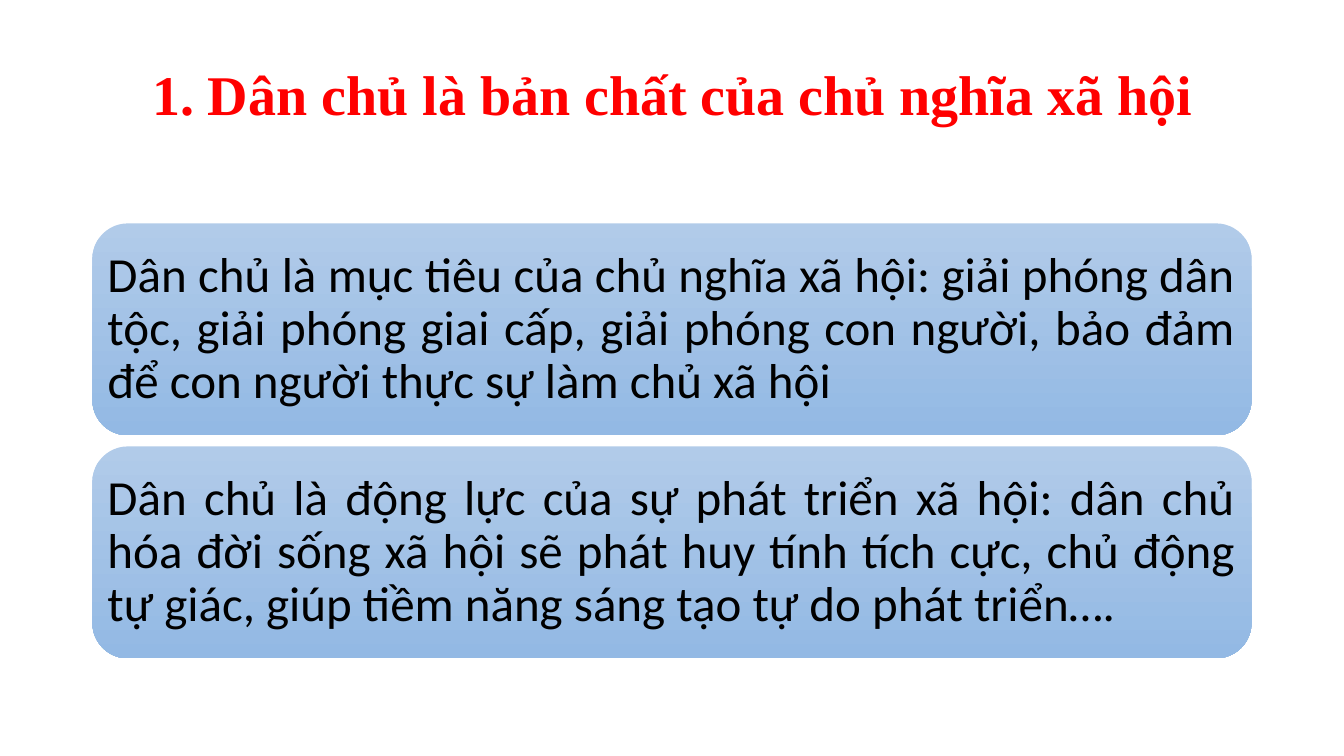
from dataclasses import dataclass

from pptx import Presentation
from pptx.dml.color import RGBColor
from pptx.enum import shapes, text
from pptx.util import Cm, Pt

HEADING = "1. Dân chủ là bản chất của chủ nghĩa xã hội"
ROLES = [
    "Dân chủ là mục tiêu của chủ nghĩa xã hội: giải phóng dân tộc, giải phóng giai cấp, "
    "giải phóng con người, bảo đảm để con người thực sự làm chủ xã hội",
    "Dân chủ là động lực của sự phát triển xã hội: dân chủ hóa đời sống xã hội sẽ phát huy "
    "tính tích cực, chủ động tự giác, giúp tiềm năng sáng tạo tự do phát triển….",
]


@dataclass(frozen=True)
class Theme:
    heading_font: str = "Times New Roman"
    heading_size: int = 40
    heading_color: str = "FF0000"
    role_font: str = "Calibri"
    role_size: int = 35
    role_color: str = "000000"
    gradient: tuple = ("B1CBE9", "93B9E4")


THEME = Theme()
LEFT, WIDTH = Cm(2.33), Cm(29.21)
HEADING_TOP, HEADING_HEIGHT = Cm(1.01), Cm(2.9)
ROLES_TOP, ROLE_HEIGHT, ROLE_GAP = Cm(5.63), Cm(5.34), Cm(0.28)
ROLE_MARGIN = Cm(0.12)


def write(frame, words, align, font, size, color, bold=False):
    frame.word_wrap = True
    frame.auto_size = text.MSO_AUTO_SIZE.NONE
    frame.vertical_anchor = text.MSO_ANCHOR.MIDDLE
    paragraph = frame.paragraphs[0]
    paragraph.alignment = align
    paragraph.line_spacing = 0.9
    paragraph.space_before = Pt(0)
    run = paragraph.add_run()
    run.text = words
    run.font.name = font
    run.font.size = Pt(size)
    run.font.bold = bold
    run.font.color.rgb = RGBColor.from_string(color)


def add_heading(slide):
    heading = slide.shapes.title
    heading.left, heading.top = LEFT, HEADING_TOP
    heading.width, heading.height = WIDTH, HEADING_HEIGHT
    write(heading.text_frame, HEADING, text.PP_ALIGN.CENTER,
          THEME.heading_font, THEME.heading_size, THEME.heading_color, bold=True)


def add_role(slide, index, words):
    top = ROLES_TOP + index * (ROLE_HEIGHT + ROLE_GAP)
    role = slide.shapes.add_shape(
        shapes.MSO_SHAPE.ROUNDED_RECTANGLE, LEFT, top, WIDTH, ROLE_HEIGHT)
    role.shadow.inherit = False
    role.line.fill.background()
    role.fill.gradient()
    role.fill.gradient_angle = 270
    for stop, color in zip(role.fill.gradient_stops, THEME.gradient):
        stop.color.rgb = RGBColor.from_string(color)
        stop.position = THEME.gradient.index(color)
    frame = role.text_frame
    frame.margin_left = frame.margin_right = ROLE_MARGIN
    frame.margin_top = frame.margin_bottom = ROLE_MARGIN
    write(frame, words, text.PP_ALIGN.JUSTIFY,
          THEME.role_font, THEME.role_size, THEME.role_color)


def main():
    deck = Presentation()
    deck.slide_width, deck.slide_height = Cm(33.87), Cm(19.05)
    slide = deck.slides.add_slide(deck.slide_layouts[5])
    add_heading(slide)
    for index, words in enumerate(ROLES):
        add_role(slide, index, words)
    deck.save("out.pptx")


if __name__ == "__main__":
    main()
